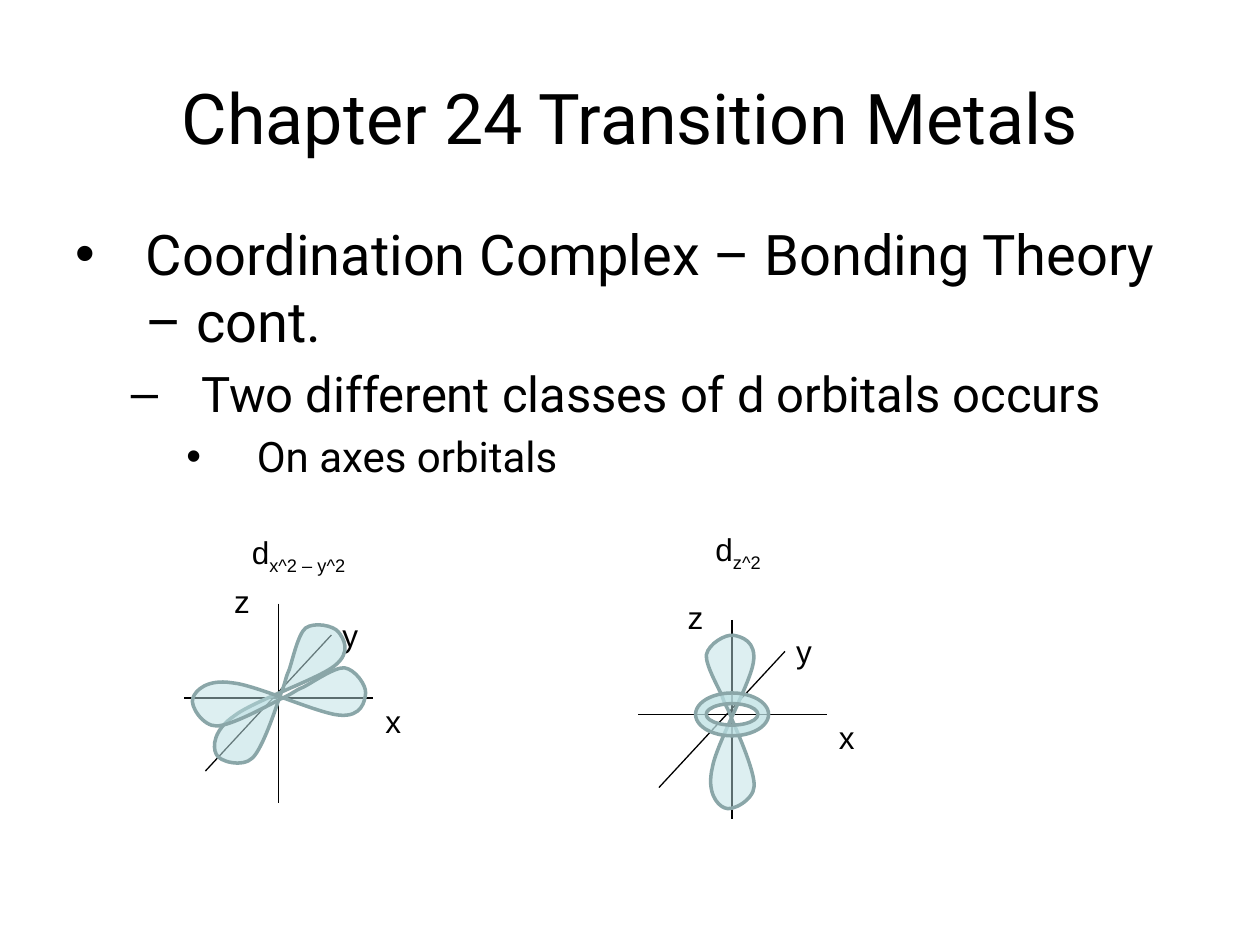
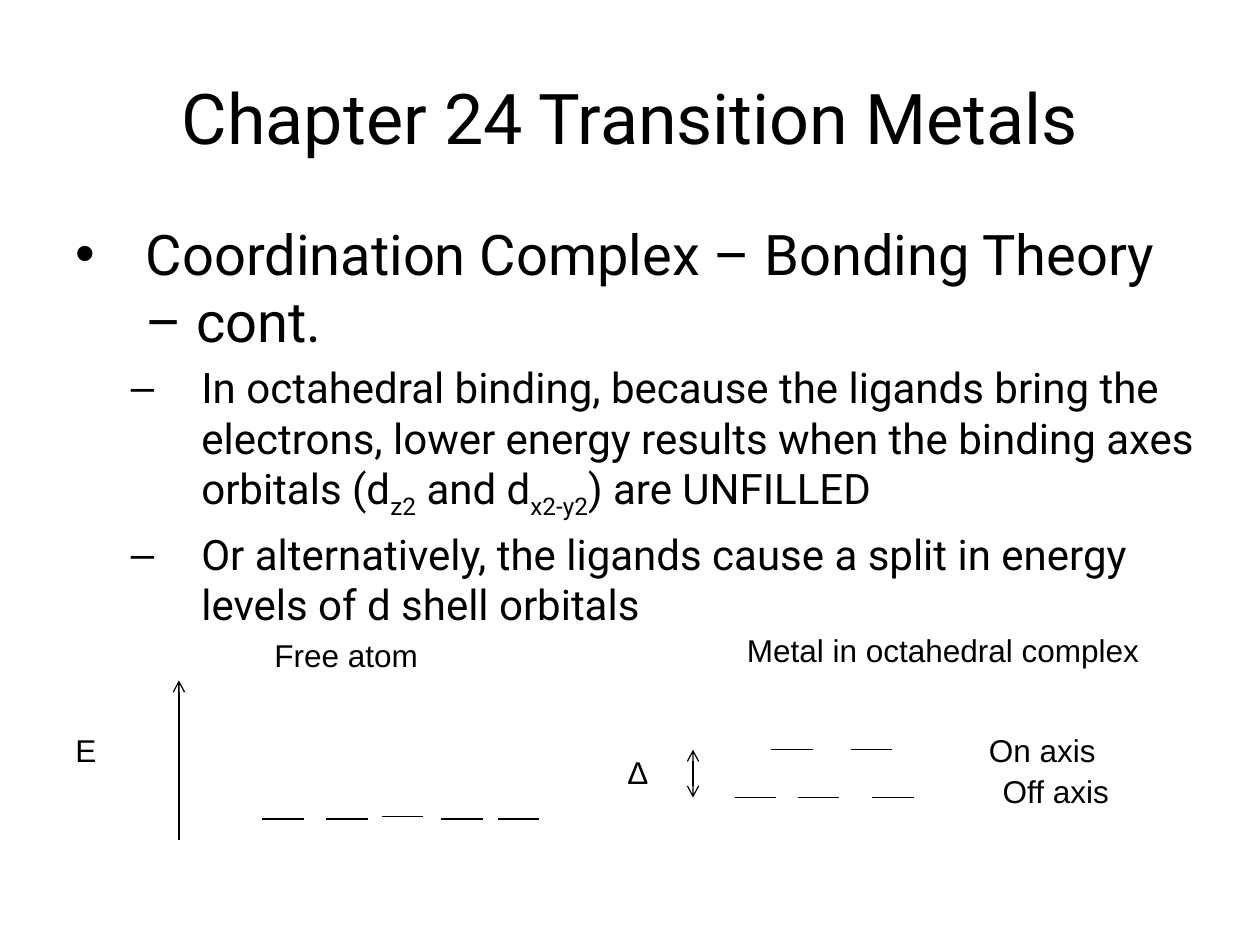
from lxml.etree import SubElement
from pptx import Presentation
from pptx.dml.color import RGBColor
from pptx.enum.shapes import MSO_CONNECTOR, MSO_SHAPE
from pptx.enum.text import MSO_ANCHOR, PP_ALIGN
from pptx.oxml.ns import qn
from pptx.util import Emu, Inches, Pt

COLORS = {"ink": "000000", "lobe": "BBE0E3", "edge": "8AA6A8"}
HEAD_FONT, LABEL_FONT = "Roboto", "Arial"
TITLE = "Chapter 24 Transition Metals"
TOPIC = "Coordination Complex – Bonding Theory – cont."

# The slide is a grid of 10 columns by 7.5 rows of square cells
SLIDE_W, SLIDE_H = Inches(10), Inches(7.5)
CELL = SLIDE_W / 10
LABEL_H = 0.4
LEVEL_W = 0.33

# Bullet, text indent in cells for each outline level
OUTLINE = [("•", 0.56), ("–", 1), ("•", 1.44)]
HANGING = -0.56

# Pair of lobes in hundredths of a cell: a start point,
# then curves of two controls and an end
LOBES_W, LOBES_H = 110, 103
LOBES_START = (55, 51)
LOBES_CURVES = [
    [(43, 46), (44, 48), (35, 44)],
    [(26, 41), (7, 37), (2, 31)],
    [(-3, 24), (0, 9), (5, 5)],
    [(10, 1), (21, -6), (32, 8)],
    [(43, 22), (60, 73), (72, 88)],
    [(83, 104), (96, 105), (102, 102)],
    [(108, 100), (113, 81), (105, 73)],
    [(97, 65), (67, 55), LOBES_START],
]


def cells(*values):
    return [Emu(round(v * CELL)) for v in values]


def rgb(name):
    return RGBColor.from_string(COLORS[name])


# Text
def add_box(shapes, x, y, w, h):
    tf = shapes.add_textbox(*cells(x, y, w, h)).text_frame
    tf.word_wrap = True
    return tf


def add_runs(p, runs, size, font):
    """Runs at odd positions are subscripts."""
    for i, text in enumerate(runs):
        r = p.add_run()
        r.text = text
        r.font.size = Pt(size)
        r.font.name = font
        r.font.color.rgb = rgb("ink")
        if i % 2:
            r.font._element.set("baseline", "-25000")


def add_label(shapes, x, y, w, *runs):
    tf = add_box(shapes, x, y, w, LABEL_H)
    add_runs(tf.paragraphs[0], runs, 18, LABEL_FONT)


def add_title(s):
    tf = add_box(s.shapes, 0.5, 0.3, 9, 1.25)
    tf.vertical_anchor = MSO_ANCHOR.MIDDLE
    p = tf.paragraphs[0]
    p.alignment = PP_ALIGN.CENTER
    add_runs(p, [TITLE], 40, HEAD_FONT)


def add_outline(s, w, h, items):
    tf = add_box(s.shapes, 0.5, 1.69, w, h)
    for i, (level, size, runs) in enumerate([(0, 32, [TOPIC])] + items):
        p = tf.add_paragraph() if i else tf.paragraphs[0]
        p.level = level
        bullet, indent = OUTLINE[level]
        margin, hanging = cells(indent, HANGING)
        pPr = p._p.get_or_add_pPr()
        pPr.set("marL", str(margin))
        pPr.set("indent", str(hanging))
        before = SubElement(pPr, qn("a:spcBef"))
        SubElement(before, qn("a:spcPct"), val="20000")
        SubElement(pPr, qn("a:buFont"), typeface=LABEL_FONT)
        SubElement(pPr, qn("a:buChar"), char=bullet)
        add_runs(p, runs, size, HEAD_FONT)


# Lines and orbitals
def add_line(shapes, start, end, arrows=()):
    c = shapes.add_connector(MSO_CONNECTOR.STRAIGHT, *cells(*start, *end))
    c.line.color.rgb = rgb("ink")
    c.line.width = Pt(0.75)
    for tag in arrows:
        SubElement(c.line._get_or_add_ln(), qn(tag), type="arrow")
    SubElement(c._element.spPr, qn("a:effectLst"))


def style_orbital(sp, opacity):
    sp.shadow.inherit = False
    sp.fill.solid()
    sp.fill.fore_color.rgb = rgb("lobe")
    color = sp._element.spPr.find(qn("a:solidFill"))[0]
    SubElement(color, qn("a:alpha"), val=str(opacity * 1000))
    sp.line.color.rgb = rgb("edge")
    sp.line.width = Pt(2)


def add_point(parent, point):
    x, y = point
    SubElement(parent, qn("a:pt"), x=str(x), y=str(y))


def add_lobes(s, x, y, rotation, opacity):
    fb = s.shapes.build_freeform(*LOBES_START, scale=CELL / 100)
    fb.add_line_segments([curve[-1] for curve in LOBES_CURVES], close=True)
    sp = fb.convert_to_shape()
    # Turn the straight segments into curves
    outline = next(sp._element.iter(qn("a:path")))
    for child in list(outline):
        outline.remove(child)
    outline.set("w", str(LOBES_W))
    outline.set("h", str(LOBES_H))
    add_point(SubElement(outline, qn("a:moveTo")), LOBES_START)
    for curve in LOBES_CURVES:
        bezier = SubElement(outline, qn("a:cubicBezTo"))
        for point in curve:
            add_point(bezier, point)
    SubElement(outline, qn("a:close"))
    sp.left, sp.top, sp.width, sp.height = cells(x, y, LOBES_W / 100, LOBES_H / 100)
    sp.rotation = rotation
    style_orbital(sp, opacity)


def add_axes(s, cx, cy):
    shapes = s.shapes.add_group_shape().shapes
    add_line(shapes, (cx, cy - 0.75), (cx, cy + 0.83))
    add_line(shapes, (cx + 0.75, cy), (cx - 0.75, cy))
    add_line(shapes, (cx + 0.42, cy - 0.5), (cx - 0.58, cy + 0.58))
    for name, dx, dy in [("x", 0.75, -0.02), ("y", 0.41, -0.7), ("z", -0.45, -0.97)]:
        add_label(shapes, cx + dx, cy + dy, 0.46, name)


def add_levels(s, y, lefts):
    for x in lefts:
        add_line(s.shapes, (x, y), (x + LEVEL_W, y))


# Slides
def orbitals_slide(s):
    add_outline(s, 9, 3.89, [
        (1, 28, ["Two different classes of d orbitals occurs"]),
        (2, 24, ["On axes orbitals"])])
    add_axes(s, 2.21, 5.54)
    add_axes(s, 5.81, 5.67)
    add_label(s.shapes, 1.9, 4.18, 1.18, "d", "x^2 – y^2")
    add_label(s.shapes, 5.58, 4.16, 1.18, "d", "z^2")
    add_lobes(s, 1.67, 5, 90, 55)
    add_lobes(s, 1.67, 5.03, 133.3, 49)
    add_lobes(s, 5.26, 5.21, 47.9, 49)
    ring = s.shapes.add_shape(MSO_SHAPE.DONUT, *cells(5.52, 5.5, 0.58, 0.34))
    style_orbital(ring, 73)


def splitting_slide(s):
    add_outline(s, 9.17, 3.48, [
        (1, 24, ["In octahedral binding, because the ligands bring the electrons, "
                 "lower energy results when the binding axes orbitals (d",
                 "z2", " and d", "x2-y2", ") are UNFILLED"]),
        (1, 24, ["Or alternatively, the ligands cause a split in energy "
                 "levels of d shell orbitals"])])
    for x, y, w, text in [(0.5, 5.75, 0.75, "E"),
                          (2.08, 5, 2.08, "Free atom"),
                          (5.83, 4.96, 3.42, "Metal in octahedral complex"),
                          (7.75, 5.75, 1.5, "On axis"),
                          (7.86, 6.08, 1.5, "Off axis"),
                          (4.88, 5.93, 0.75, "Δ")]:
        add_label(s.shapes, x, y, w, text)
    # Energy axis, free atom levels, then the split levels and their gap
    add_line(s.shapes, (1.42, 6.67), (1.42, 5.4), ["a:tailEnd"])
    add_levels(s, 6.5, [2.08, 2.59, 3.5, 3.95])
    add_levels(s, 6.48, [3.03])
    add_levels(s, 6.33, [5.83, 6.33, 6.92])
    add_levels(s, 5.95, [6.12, 6.75])
    add_line(s.shapes, (5.5, 5.95), (5.5, 6.33), ["a:headEnd", "a:tailEnd"])


def main():
    prs = Presentation()
    prs.slide_width, prs.slide_height = SLIDE_W, SLIDE_H
    for build in (orbitals_slide, splitting_slide):
        s = prs.slides.add_slide(prs.slide_layouts[6])
        add_title(s)
        build(s)
    prs.save("out.pptx")


if __name__ == "__main__":
    main()
